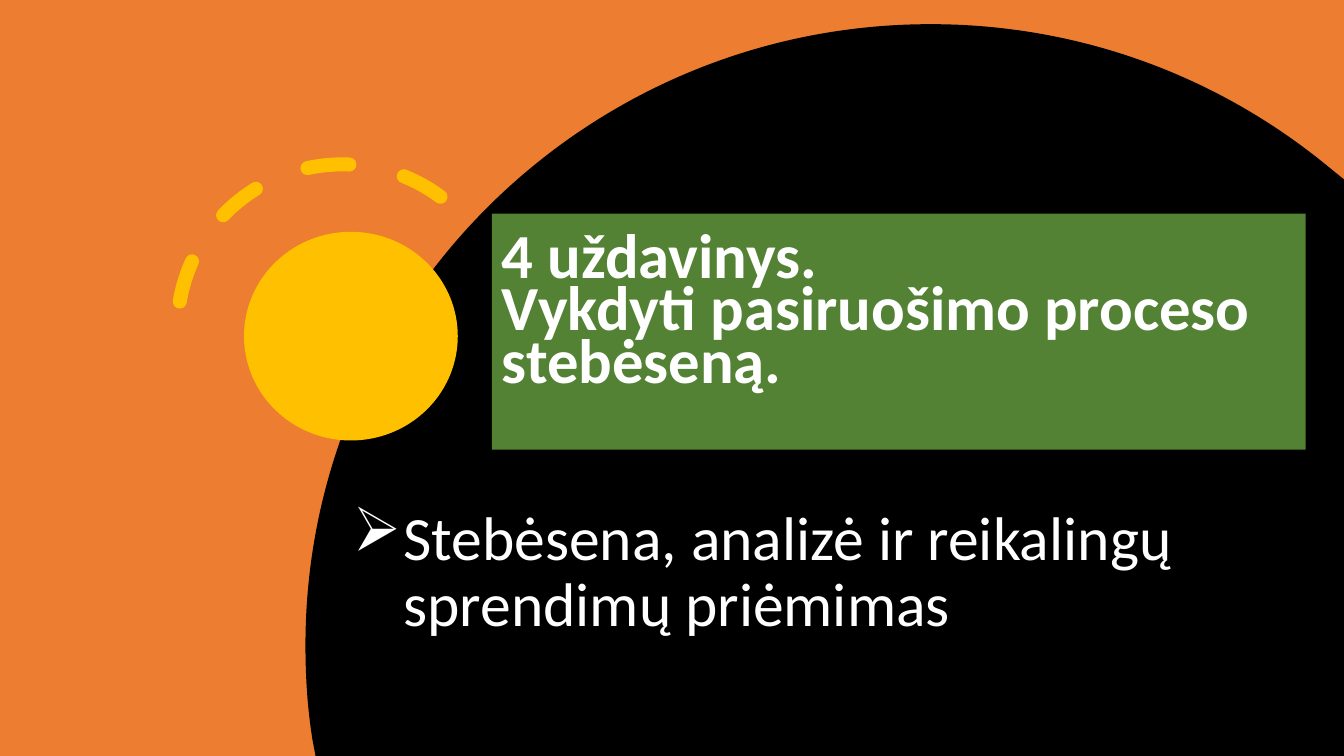
from pptx import Presentation
from pptx.dml.color import RGBColor
from pptx.enum.dml import MSO_LINE
from pptx.enum.shapes import MSO_SHAPE
from pptx.enum.text import MSO_ANCHOR, PP_ALIGN
from pptx.util import Inches, Pt
from lxml.etree import SubElement
from pptx.oxml.ns import qn

BLACK = RGBColor(0, 0, 0)
WHITE = RGBColor(255, 255, 255)
ORANGE = RGBColor(0xED, 0x7D, 0x31)
GOLD = RGBColor(0xFF, 0xC0, 0)
GREEN = RGBColor(0x54, 0x82, 0x35)
FONT = "Calibri"

# Content
TASK = ["4 uždavinys. ", "Vykdyti pasiruošimo proceso stebėseną."]
POINT = "Stebėsena, analizė ir reikalingų sprendimų priėmimas"

# Outline of the large disc in hundredths of an inch:
# one point ends a straight side, three points end a curve
LEFT, TOP = 303, 24
START = (923, 24)
SIDES = [
    [(1073, 24), (1210, 77), (1317, 165)],
    [(1333, 178)],
    [(1333, 750)],
    [(313, 750)],
    [(310, 734)],
    [(305, 703), (303, 672), (303, 640)],
    [(303, 300), (581, 24), START],
]

deck = Presentation()
deck.slide_width, deck.slide_height = Inches(13.33), Inches(7.5)
slide = deck.slides.add_slide(deck.slide_layouts[5])
slide.background.fill.solid()
slide.background.fill.fore_color.rgb = BLACK


def paint(shape, color):
    shape.shadow.inherit = False
    shape.fill.solid()
    shape.fill.fore_color.rgb = color
    shape.line.fill.background()


def add(kind, box, color):
    shape = slide.shapes.add_shape(kind, *map(Inches, box))
    paint(shape, color)
    return shape


def write(para, text, size, bold=False):
    run = para.add_run()
    run.text = text
    font = run.font
    font.name, font.size, font.bold = FONT, Pt(size), bold
    font.color.rgb = WHITE


def align(frame, spacing):
    """Wrapped, bottom-anchored, left-aligned paragraph."""
    frame.word_wrap = True
    frame.vertical_anchor = MSO_ANCHOR.BOTTOM
    para = frame.paragraphs[0]
    para.alignment = PP_ALIGN.LEFT
    para.line_spacing = spacing
    return para


# Backdrop
add(MSO_SHAPE.RECTANGLE, (0, 0, 13.33, 7.5), ORANGE)

# Disc: straight sides first, then the curved ones are bent
pen = slide.shapes.build_freeform(*START, scale=Inches(0.01))
pen.add_line_segments([side[-1] for side in SIDES], close=True)
disc = pen.convert_to_shape()
paint(disc, BLACK)
lines = list(disc._element.iter(qn("a:lnTo")))
for line, side in zip(lines, SIDES):
    if len(side) == 3:
        line.clear()
        bend = line.getparent().makeelement(qn("a:cubicBezTo"))
        for x, y in side:
            SubElement(bend, qn("a:pt"), x=str(x - LEFT), y=str(y - TOP))
        line.getparent().replace(line, bend)

# Sun and its dashed rays
add(MSO_SHAPE.OVAL, (2.42, 2.3, 2.12, 2.07), GOLD)
rays = slide.shapes.add_shape(MSO_SHAPE.ARC, *map(Inches, (1.76, 1.63, 3.27, 3.27)))
rays.shadow.inherit = False
rays.fill.background()
rays.rotation = 308.7
rays.adjustments[0], rays.adjustments[1] = 144.56, 2.28
rays.line.color.rgb = GOLD
rays.line.width = Pt(10)
rays.line.dash_style = MSO_LINE.DASH
rays.line._get_or_add_ln().set("cap", "rnd")

# Title with an arrow bullet, brought in front of the disc
title = slide.shapes.title
slide.shapes._spTree.append(title._element)
title.left, title.top, title.width, title.height = map(Inches, (3.4, 4.82, 9.55, 1.58))
para = align(title.text_frame, 0.9)
props = para._p.get_or_add_pPr()
props.set("marL", str(Inches(0.5)))
props.set("indent", str(Inches(-0.5)))
SubElement(props, qn("a:buChar"), char="➢")
write(para, POINT, 44)

# Green task panel
panel = add(MSO_SHAPE.RECTANGLE, (4.88, 2.12, 8.07, 2.34), GREEN)
panel.text_frame.margin_bottom = Inches(0.55)
para = align(panel.text_frame, 0.7)
for row, text in enumerate(TASK):
    if row:
        para.add_line_break()
    write(para, text, 44.8, True)

deck.save("out.pptx")
